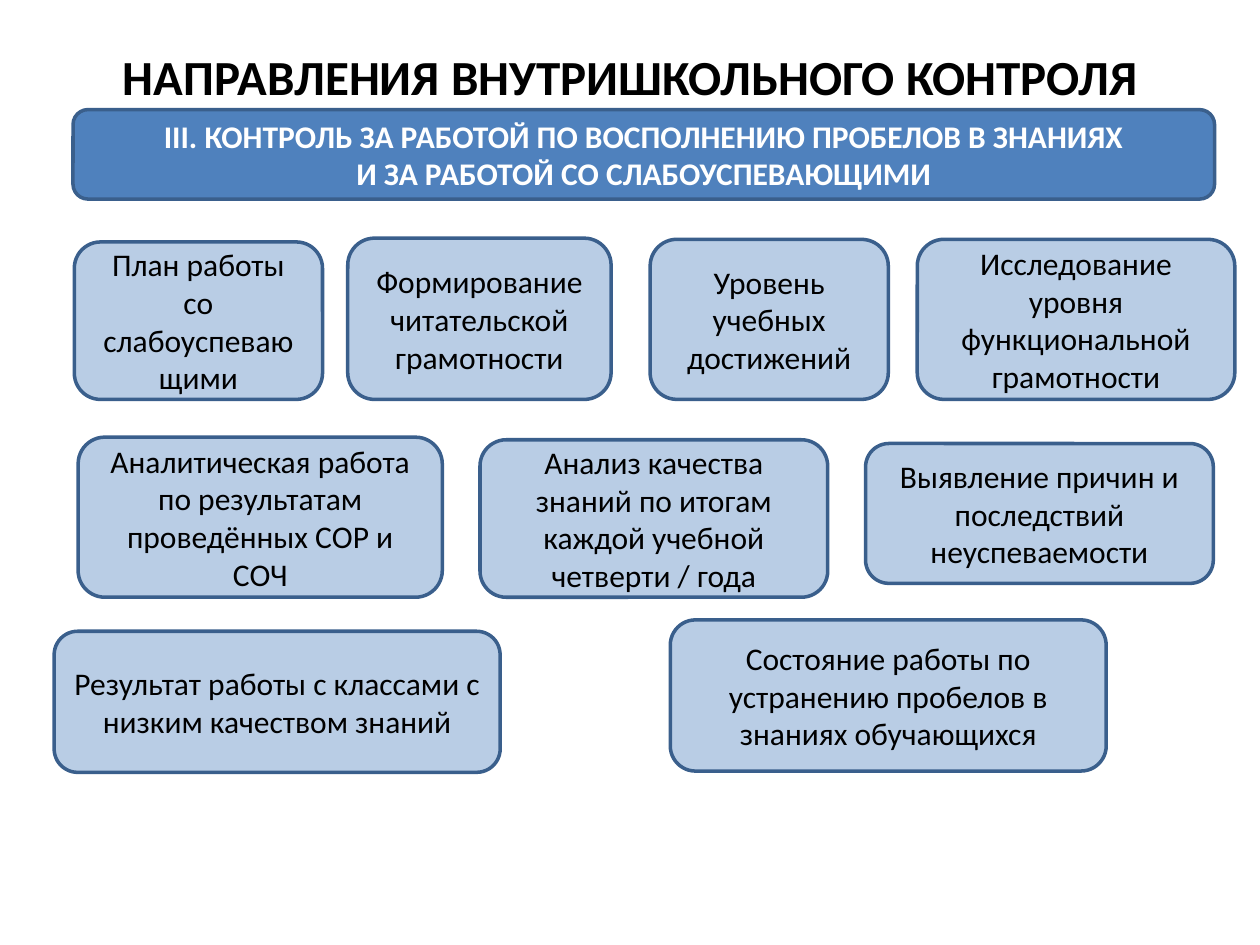
from dataclasses import dataclass

from pptx import Presentation
from pptx.dml.color import RGBColor
from pptx.enum.shapes import MSO_SHAPE as Shape
from pptx.enum.text import MSO_ANCHOR as Anchor, PP_ALIGN as Align
from pptx.util import Inches, Pt

FONT = "Calibri"
BLACK, WHITE = "000000", "FFFFFF"
PALE_BLUE, BLUE, OUTLINE = "B9CDE5", "4F81BD", "3A5F8C"


@dataclass
class Card:
    left: float
    top: float
    width: float
    height: float
    lines: tuple[str, ...]
    fill: str = PALE_BLUE
    color: str = BLACK
    bold: bool = False


def rgb(value: str) -> RGBColor:
    return RGBColor.from_string(value)


def write(frame, lines: tuple[str, ...], size: int, color: str, bold: bool) -> None:
    """Fill a text frame with centred lines, one paragraph each."""
    frame.word_wrap = True
    frame.vertical_anchor = Anchor.MIDDLE
    for index, line in enumerate(lines):
        paragraph = frame.add_paragraph() if index else frame.paragraphs[0]
        paragraph.alignment = Align.CENTER
        run = paragraph.add_run()
        run.text = line
        run.font.name = FONT
        run.font.size = Pt(size)
        run.font.bold = bold
        run.font.color.rgb = rgb(color)


def draw_card(slide, card: Card) -> None:
    box = slide.shapes.add_shape(
        Shape.ROUNDED_RECTANGLE, Inches(card.left), Inches(card.top),
        Inches(card.width), Inches(card.height))
    box.shadow.inherit = False
    box.fill.solid()
    box.fill.fore_color.rgb = rgb(card.fill)
    box.line.color.rgb = rgb(OUTLINE)
    box.line.width = Pt(2)
    write(box.text_frame, card.lines, 18, card.color, card.bold)


CARDS = [
    # Section heading
    Card(0.58, 0.87, 9.06, 0.71,
         ("III. КОНТРОЛЬ ЗА РАБОТОЙ ПО ВОСПОЛНЕНИЮ ПРОБЕЛОВ В ЗНАНИЯХ",
          "И ЗА РАБОТОЙ СО СЛАБОУСПЕВАЮЩИМИ"), BLUE, WHITE, True),
    # First row
    Card(0.59, 1.92, 1.97, 1.25, ("План работы со слабоуспевающими",)),
    Card(2.76, 1.89, 2.09, 1.28, ("Формирование читательской грамотности",)),
    Card(5.16, 1.9, 1.89, 1.27, ("Уровень учебных достижений",)),
    Card(7.28, 1.9, 2.52, 1.27,
         ("Исследование уровня функциональной грамотности",)),
    # Second row
    Card(0.62, 3.47, 2.89, 1.27,
         ("Аналитическая работа по результатам проведённых СОР и СОЧ",)),
    Card(3.81, 3.49, 2.76, 1.25,
         ("Анализ качества знаний по итогам каждой учебной четверти / года",)),
    Card(6.87, 3.52, 2.76, 1.11,
         ("Выявление причин и последствий неуспеваемости",)),
    # Third row
    Card(0.43, 5.01, 3.54, 1.12,
         ("Результат работы с классами с низким качеством знаний",)),
    Card(5.32, 4.92, 3.46, 1.2,
         ("Состояние работы по устранению пробелов в знаниях обучающихся",)),
]


def main() -> None:
    deck = Presentation()
    deck.slide_width, deck.slide_height = Inches(10), Inches(7.5)
    slide = deck.slides.add_slide(deck.slide_layouts[6])

    # Title
    title = slide.shapes.add_textbox(
        Inches(0.5), Inches(0.3), Inches(9), Inches(0.61))
    write(title.text_frame, ("НАПРАВЛЕНИЯ ВНУТРИШКОЛЬНОГО КОНТРОЛЯ",),
          28, BLACK, True)

    # Heading and control areas
    for card in CARDS:
        draw_card(slide, card)

    deck.save("out.pptx")


if __name__ == "__main__":
    main()
